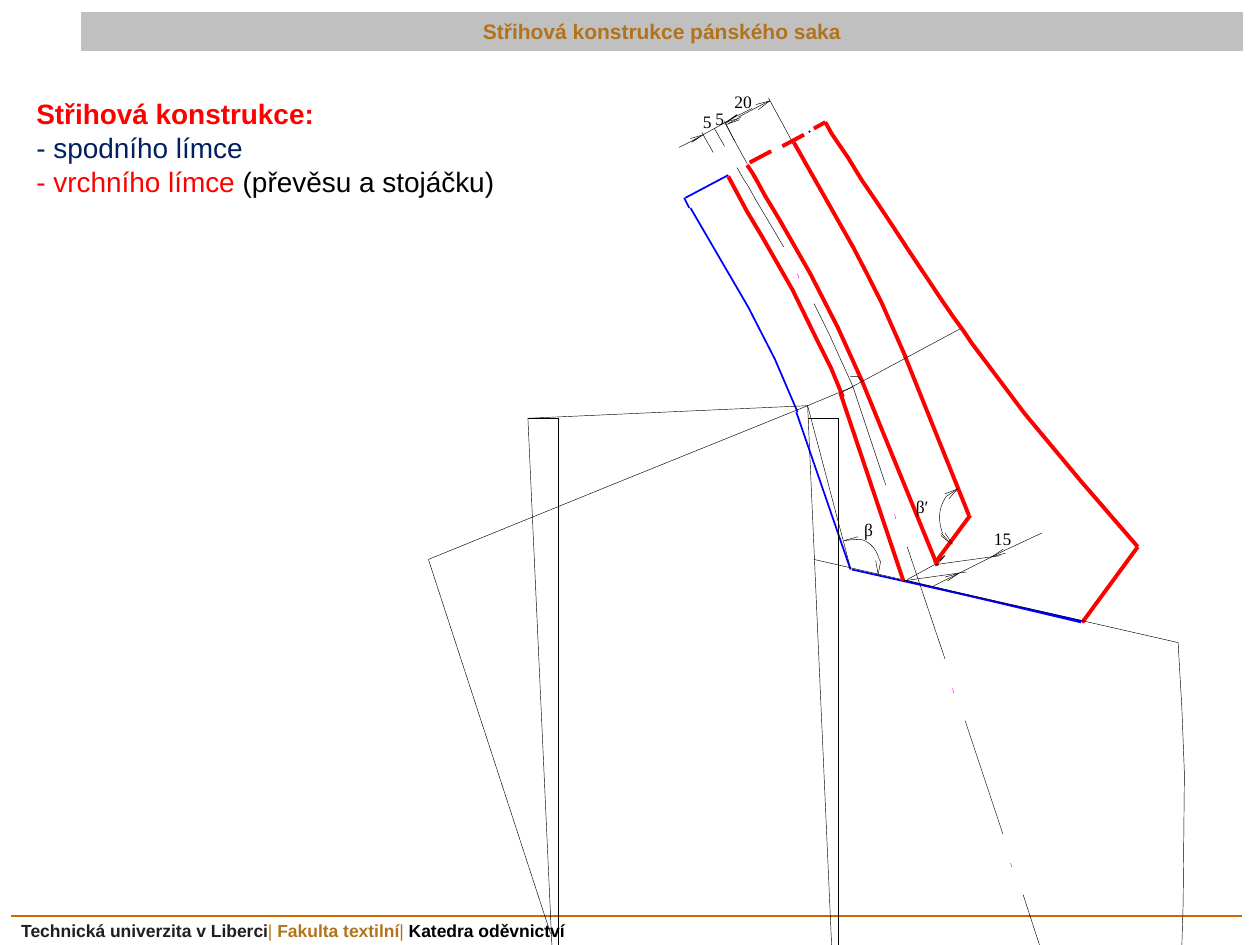
from lxml.etree import SubElement
from pptx import Presentation
from pptx.dml.color import RGBColor
from pptx.enum.shapes import MSO_CONNECTOR, MSO_SHAPE
from pptx.enum.text import MSO_ANCHOR, PP_ALIGN
from pptx.oxml.ns import qn
from pptx.util import Inches, Pt

COLORS = {
    "black": "000000", "ink": "221E1F", "brown": "B3721C", "orange": "CC6600",
    "gray": "C0C0C0", "blue": "0000FF", "red": "FF0000", "navy": "002060",
    "magenta": "FF00FF",
}

presentation = Presentation()
presentation.slide_width = Inches(10)
presentation.slide_height = Inches(7.5)
slide = presentation.slides.add_slide(presentation.slide_layouts[6])


def draw_path(points, color, width):
    corners = [(Inches(x), Inches(y)) for x, y in points]
    if len(corners) == 2:
        shape = slide.shapes.add_connector(MSO_CONNECTOR.STRAIGHT, *corners[0], *corners[1])
        SubElement(shape._element.spPr, qn("a:effectLst"))
    else:
        builder = slide.shapes.build_freeform(*corners[0])
        builder.add_line_segments(corners[1:], close=False)
        shape = builder.convert_to_shape()
        shape.fill.background()
        shape.shadow.inherit = False
    shape.line.color.rgb = RGBColor.from_string(COLORS[color])
    shape.line.width = Pt(width)


def write_text(shape, lines, size, font_name="Arial"):
    frame = shape.text_frame
    frame.word_wrap = True
    frame.text = "\n".join("".join(text for text, _, _ in line) for line in lines)
    for paragraph, line in zip(frame.paragraphs, lines):
        paragraph.text = ""
        for text, color, bold in line:
            run = paragraph.add_run()
            run.text = text
            run.font.name = font_name
            run.font.size = Pt(size)
            run.font.bold = bold
            run.font.color.rgb = RGBColor.from_string(COLORS[color])


footer = slide.shapes.add_textbox(Inches(0.07), Inches(7.25), Inches(5.85), Inches(0.27))
write_text(footer, [[
    ("Technická univerzita v Liberci", "ink", True), ("| ", "brown", False),
    ("Fakulta textilní", "brown", True), ("| ", "brown", False),
    ("Katedra oděvnictví", "black", True),
]], 10)

title = slide.shapes.add_shape(
    MSO_SHAPE.RECTANGLE, Inches(0.65), Inches(0.1), Inches(9.21), Inches(0.3))
title.shadow.inherit = False
title.fill.solid()
title.fill.fore_color.rgb = RGBColor.from_string(COLORS["gray"])
title.line.color.rgb = RGBColor.from_string(COLORS["gray"])
title.line.width = Pt(0.75)
title.text_frame.vertical_anchor = MSO_ANCHOR.MIDDLE
write_text(title, [[("Střihová konstrukce pánského saka", "brown", True)]], 12)
title.text_frame.paragraphs[0].alignment = PP_ALIGN.CENTER

draw_path([(0.09, 7.27), (9.86, 7.27)], "orange", 1.5)

collar_edge = [
    (6.6, 1.06), (6.73, 1.25), (6.84, 1.43), (6.95, 1.59), (7.05, 1.74), (7.22, 2),
    (7.36, 2.21), (7.48, 2.39), (7.57, 2.52), (7.65, 2.63), (7.71, 2.72),
    (8.13, 3.28), (8.58, 3.82), (9.03, 4.34),
]
collar_dashes = [
    [(6.38, 1.07), (6.21, 1.16)], [(6.12, 1.2), (5.95, 1.29)],
    [(8.59, 4.94), (9.03, 4.34)], [(6.55, 0.97), (6.46, 1.02)],
    [(6.55, 0.97), (6.6, 1.06)],
]
under_collar = [
    [(8.59, 4.93), (6.76, 4.52)], [(7.19, 4.61), (8.58, 4.94)],
    [(6.32, 3.27), (6.75, 4.52)],
    [(5.48, 1.65), (5.94, 2.44), (6.15, 2.85), (6.33, 3.27)],
    [(6.43, 1.04), (6.42, 1.05)], [(5.78, 1.39), (5.44, 1.57)],
    [(5.43, 1.57), (5.47, 1.65)],
]
jacket_pattern = [
    [(6.41, 3.22), (6.75, 4.51)], [(4.19, 3.32), (6.41, 3.22)],
    [(4.85, 3.85), (6.41, 3.22)],
    [(5.85, 1.33), (5.9, 1.42), (5.94, 1.48), (6, 1.59), (6.12, 1.79), (6.22, 1.96)],
    [(6.46, 2.41), (6.58, 2.65), (6.77, 3.07)],
    [(3.4, 4.44), (4.37, 7.41)], [(4.19, 3.32), (4.38, 7.5)],
    [(4.43, 7.5), (4.43, 3.32)], [(3.4, 4.44), (4.85, 3.85)],
    [(4.43, 3.32), (4.19, 3.32)], [(6.46, 4.44), (9.35, 5.1)],
    [(8.25, 7.5), (8.12, 7.1)], [(7.96, 6.62), (7.66, 5.72)],
    [(7.5, 5.23), (7.2, 4.34)], [(7.03, 3.85), (6.77, 3.07)],
    [(6.41, 3.22), (6.6, 7.5)], [(6.65, 7.5), (6.65, 3.32)],
    [(9.38, 7.5), (9.39, 7.18), (9.4, 6.14), (9.38, 5.62), (9.35, 5.1)],
    [(6.41, 3.22), (6.77, 3.07)], [(6.65, 3.32), (6.41, 3.32)],
    [(7.43, 4.49), (7.5, 4.41), (7.42, 4.48)], [(7.41, 4.47), (7.5, 4.41)],
    [(7.2, 4.6), (7.42, 4.48)],
]
upper_collar = [
    [(5.78, 1.4), (5.93, 1.68), (6.05, 1.88), (6.29, 2.3), (6.5, 2.73),
     (6.6, 2.93), (6.69, 3.15)],
    [(5.93, 1.31), (5.97, 1.37), (6.01, 1.44), (6.07, 1.55), (6.19, 1.75),
     (6.43, 2.17), (6.65, 2.6), (6.84, 3.02)],
    [(6.3, 1.13), (6.77, 1.96), (6.89, 2.19), (7, 2.41), (7.19, 2.84)],
    [(7.7, 4.09), (7.42, 4.47)], [(7.18, 2.82), (7.69, 4.09)],
    [(6.84, 3.02), (7.44, 4.49)], [(7.17, 4.61), (6.67, 3.12)],
]
axis_dots = [
    [(6.33, 2.17), (6.34, 2.21)], [(8.03, 6.88), (8.02, 6.85)],
    [(7.57, 5.5), (7.56, 5.46)], [(7.11, 4.12), (7.1, 4.08)],
]
shoulder_marks = [
    [(7.62, 2.61), (6.67, 3.12)], [(6.85, 3.03), (6.81, 2.99), (6.75, 2.99)],
]
dimension_20 = [
    [(5.87, 0.95), (5.76, 0.99)], [(6.02, 0.87), (6.11, 0.8)],
    [(5.93, 1.3), (5.75, 0.97)], [(6.28, 1.11), (6.1, 0.78)],
    [(5.86, 0.93), (6.01, 0.85)], [(5.85, 0.91), (5.76, 0.98)],
    [(6, 0.83), (6.11, 0.8)], [(6.11, 0.8), (6.01, 0.85)],
    [(5.78, 0.98), (5.88, 0.93)],
]
dimension_5 = [
    [(5.49, 1.12), (5.39, 1.17)], [(5.66, 1.21), (5.57, 1.05)],
    [(5.75, 1.16), (5.67, 1.02)], [(5.48, 1.1), (5.58, 1.07)],
    [(5.49, 1.13), (5.58, 1.07), (5.49, 1.12)], [(5.86, 0.94), (5.76, 0.97)],
    [(5.85, 0.91), (5.76, 0.97), (5.85, 0.92)], [(5.83, 1.12), (5.75, 0.96)],
    [(5.58, 1.07), (5.76, 0.97)], [(5.85, 0.92), (5.97, 0.86)],
]
dimension_15 = [
    [(7.17, 4.61), (7.67, 4.54)], [(7.43, 4.48), (7.94, 4.41)],
    [(7.51, 4.6), (7.41, 4.65)], [(7.97, 4.37), (8.27, 4.23)],
    [(7.61, 4.55), (7.87, 4.42)], [(7.5, 4.58), (7.61, 4.55)],
    [(7.52, 4.61), (7.61, 4.55)], [(7.61, 4.55), (7.51, 4.6)],
    [(7.98, 4.39), (7.87, 4.42)], [(7.96, 4.36), (7.87, 4.42)],
    [(7.87, 4.42), (7.97, 4.37)],
]
angle_arrowheads = [
    [(6.99, 4.45), (6.97, 4.56)], [(6.95, 4.45), (6.97, 4.56)],
    [(6.81, 4.26), (6.7, 4.29)], [(6.7, 4.29), (6.81, 4.28)],
    [(7.5, 3.92), (7.6, 3.88)], [(7.53, 3.96), (7.6, 3.88)],
    [(7.6, 3.88), (7.51, 3.94)], [(7.47, 4.25), (7.55, 4.32)],
    [(7.54, 4.31), (7.47, 4.23)], [(7.5, 4.23), (7.56, 4.32)],
]
angle_controls = [
    [(6.98, 4.45), (6.96, 4.35), (6.88, 4.27), (6.79, 4.28)],
    [(7.51, 3.94), (7.47, 4), (7.43, 4.09), (7.48, 4.23)],
]
steps = 12
angle_arcs = []
for controls in angle_controls:
    arc = []
    for step in range(steps + 1):
        t = step / steps
        weights = ((1 - t) ** 3, 3 * t * (1 - t) ** 2, 3 * t ** 2 * (1 - t), t ** 3)
        arc.append([sum(w * point[axis] for w, point in zip(weights, controls))
                    for axis in (0, 1)])
    angle_arcs.append(arc)

blue_edge = [(x - 0.01, y - 0.02) for x, y in collar_edge]
layers = [
    ("blue", 1, under_collar + [blue_edge] + collar_dashes),
    ("red", 2.25, [collar_edge] + collar_dashes),
    ("black", 0.25, jacket_pattern),
    ("red", 2.25, upper_collar),
    ("magenta", 0.25, axis_dots),
    ("black", 0.25, shoulder_marks + dimension_20 + dimension_5 + dimension_15
     + angle_arcs + angle_arrowheads),
]
for color, width, paths in layers:
    for points in paths:
        draw_path(points, color, width)

labels = [
    ("20", 5.73, 0.67, 0.57), ("5", 5.48, 0.83, 0.36), ("5", 5.58, 0.81, 0.36),
    ("15", 7.79, 4.14, 0.37), ("β", 6.76, 4.07, 0.37), ("β′", 7.17, 3.89, 0.36),
]
for text, left, top, width in labels:
    label = slide.shapes.add_textbox(Inches(left), Inches(top), Inches(width), Inches(0.25))
    write_text(label, [[(text, "black", False)]], 10, "Times New Roman")

heading = slide.shapes.add_textbox(Inches(0.19), Inches(0.72), Inches(6.8), Inches(0.91))
write_text(heading, [
    [("Střihová konstrukce:", "red", True)],
    [("- spodního límce", "navy", False)],
    [("- vrchního límce ", "red", False), ("(převěsu a stojáčku)", "black", False)],
], 16)

presentation.save("out.pptx")
